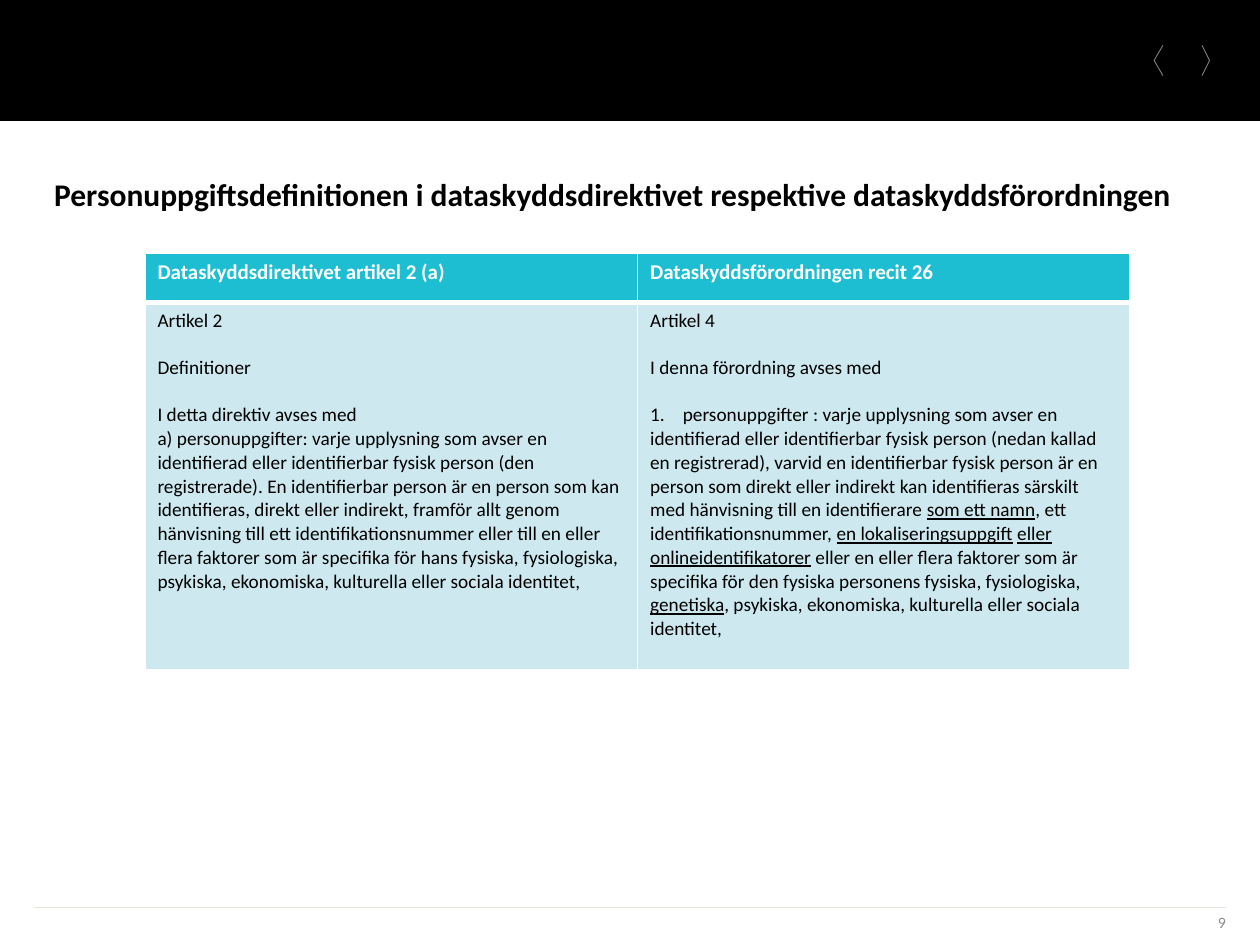
from lxml.etree import SubElement
from pptx import Presentation
from pptx.dml.color import RGBColor
from pptx.enum.shapes import MSO_CONNECTOR, MSO_SHAPE
from pptx.enum.text import MSO_ANCHOR, MSO_AUTO_SIZE, PP_ALIGN
from pptx.oxml import parse_xml
from pptx.oxml.ns import nsdecls, qn
from pptx.util import Inches, Pt

FONT = "Calibri"
BLACK = RGBColor(0x00, 0x00, 0x00)
WHITE = RGBColor(0xFF, 0xFF, 0xFF)
TURQUOISE = RGBColor(0x1E, 0xBE, 0xD2)
PALE_BLUE = RGBColor(0xCD, 0xE8, 0xEE)
ARROW_GREY = RGBColor(0x80, 0x80, 0x80)
RULE_BEIGE = RGBColor(0xE9, 0xE4, 0xDB)
NUMBER_GREY = RGBColor(0x8C, 0x8C, 0x8C)

TITLE = "Personuppgiftsdefinitionen i dataskyddsdirektivet respektive dataskyddsförordningen"
PAGE_NUMBER = "9"
HEADINGS = ["Dataskyddsdirektivet artikel 2 (a)", "Dataskyddsförordningen recit 26"]
GAP = Pt(13.5)

# Each paragraph: space after, then (text, underlined) spans
DIRECTIVE = [
    (GAP, [("Artikel 2", False)]),
    (GAP, [("Definitioner", False)]),
    (Pt(0), [("I detta direktiv avses med", False)]),
    (Pt(0), [("a) personuppgifter: varje upplysning som avser en identifierad eller "
              "identifierbar fysisk person (den registrerade). En identifierbar person är "
              "en person som kan identifieras, direkt eller indirekt, framför allt genom "
              "hänvisning till ett identifikationsnummer eller till en eller flera faktorer "
              "som är specifika för hans fysiska, fysiologiska, psykiska, ekonomiska, "
              "kulturella eller sociala identitet,", False)]),
]
REGULATION = [
    (GAP, [("Artikel 4", False)]),
    (GAP, [("I denna förordning avses med", False)]),
    (Pt(0), [
        ("1.\tpersonuppgifter : varje upplysning som avser en identifierad eller "
         "identifierbar fysisk person (nedan kallad en registrerad), varvid en "
         "identifierbar fysisk person är en person som direkt eller indirekt kan "
         "identifieras särskilt med hänvisning till en identifierare ", False),
        ("som ett namn", True),
        (", ett identifikationsnummer, ", False),
        ("en lokaliseringsuppgift", True),
        (" ", False),
        ("eller onlineidentifikatorer", True),
        (" eller en eller flera faktorer som är specifika för den fysiska personens "
         "fysiska, fysiologiska, ", False),
        ("genetiska", True),
        (", psykiska, ekonomiska, kulturella eller sociala identitet,", False),
    ]),
]


def style(para, size, color, bold=False):
    font = para.font
    font.name, font.size, font.bold = FONT, Pt(size), bold
    font.color.rgb = color


def clear_insets(frame):
    frame.margin_left = frame.margin_right = frame.margin_top = frame.margin_bottom = 0
    frame.word_wrap = True
    frame.auto_size = MSO_AUTO_SIZE.NONE


def add_chevron(page, tip, back):
    builder = page.shapes.build_freeform(Inches(back), Inches(0.36), scale=1.0)
    builder.add_line_segments(
        [(Inches(tip), Inches(0.48)), (Inches(back), Inches(0.6))], close=False)
    chevron = builder.convert_to_shape()
    chevron.shadow.inherit = False
    chevron.fill.background()
    chevron.line.color.rgb = ARROW_GREY
    chevron.line.width = Pt(0.5)


def set_borders(cell, **widths):
    properties = cell._tc.get_or_add_tcPr()
    for index, side in enumerate("LRTB"):
        width = Pt(widths.get(side, 1))
        properties.insert(index, parse_xml(
            f'<a:ln{side} {nsdecls("a")} w="{width}"><a:solidFill>'
            f'<a:srgbClr val="{WHITE}"/></a:solidFill></a:ln{side}>'))


def fill_cell(cell, color):
    cell.fill.solid()
    cell.fill.fore_color.rgb = color


def write_body(cell, paragraphs):
    frame = cell.text_frame
    for index, (space_after, spans) in enumerate(paragraphs):
        para = frame.add_paragraph() if index else frame.paragraphs[0]
        if "\t" in spans[0][0]:
            tabs = SubElement(para._p.get_or_add_pPr(), qn("a:tabLst"))
            SubElement(tabs, qn("a:tab"), pos=str(Inches(0.26)), algn="l")
        para.space_after = space_after
        style(para, 11, BLACK)
        for text, underlined in spans:
            span = para.add_run()
            span.text = text
            if underlined:
                span.font.underline = True


def add_definitions(page):
    table = page.shapes.add_table(
        2, 2, Inches(1.15), Inches(2.01), Inches(7.82), Inches(3.31)).table
    table.rows[0].height = Inches(0.39)
    table.rows[1].height = Inches(2.92)
    for column, (heading, body) in enumerate(zip(HEADINGS, [DIRECTIVE, REGULATION])):
        top, bottom = table.cell(0, column), table.cell(1, column)
        top.text = heading
        style(top.text_frame.paragraphs[0], 12, WHITE, bold=True)
        write_body(bottom, body)
        fill_cell(top, TURQUOISE)
        fill_cell(bottom, PALE_BLUE)
        set_borders(top, B=3)
        set_borders(bottom, T=3)


def main():
    deck = Presentation()
    deck.slide_width, deck.slide_height = Inches(10), Inches(7.5)
    page = deck.slides.add_slide(deck.slide_layouts[5])

    banner = page.shapes.add_shape(MSO_SHAPE.RECTANGLE, 0, 0, Inches(10), Inches(0.96))
    banner.shadow.inherit = False
    banner.fill.solid()
    banner.fill.fore_color.rgb = BLACK
    banner.line.fill.background()
    add_chevron(page, tip=9.6, back=9.54)
    add_chevron(page, tip=9.16, back=9.23)

    rule = page.shapes.add_connector(
        MSO_CONNECTOR.STRAIGHT, Inches(0.27), Inches(7.2), Inches(9.73), Inches(7.2))
    rule.line.color.rgb = RULE_BEIGE
    rule.line.width = Pt(0.25)
    SubElement(rule._element.spPr, qn("a:effectLst"))

    title = page.shapes.title
    title.left, title.top = Inches(0.43), Inches(1.39)
    title.width, title.height = Inches(9.37), Inches(0.47)
    title.text = TITLE
    clear_insets(title.text_frame)
    title.text_frame.vertical_anchor = MSO_ANCHOR.TOP
    para = title.text_frame.paragraphs[0]
    para.alignment = PP_ALIGN.LEFT
    style(para, 18, BLACK, bold=True)

    number = page.shapes.add_textbox(
        Inches(7.17), Inches(7.2), Inches(2.56), Inches(0.24)).text_frame
    number.text = PAGE_NUMBER
    clear_insets(number)
    number.vertical_anchor = MSO_ANCHOR.MIDDLE
    number.paragraphs[0].alignment = PP_ALIGN.RIGHT
    style(number.paragraphs[0], 9, NUMBER_GREY)

    add_definitions(page)
    deck.save("out.pptx")


if __name__ == "__main__":
    main()
